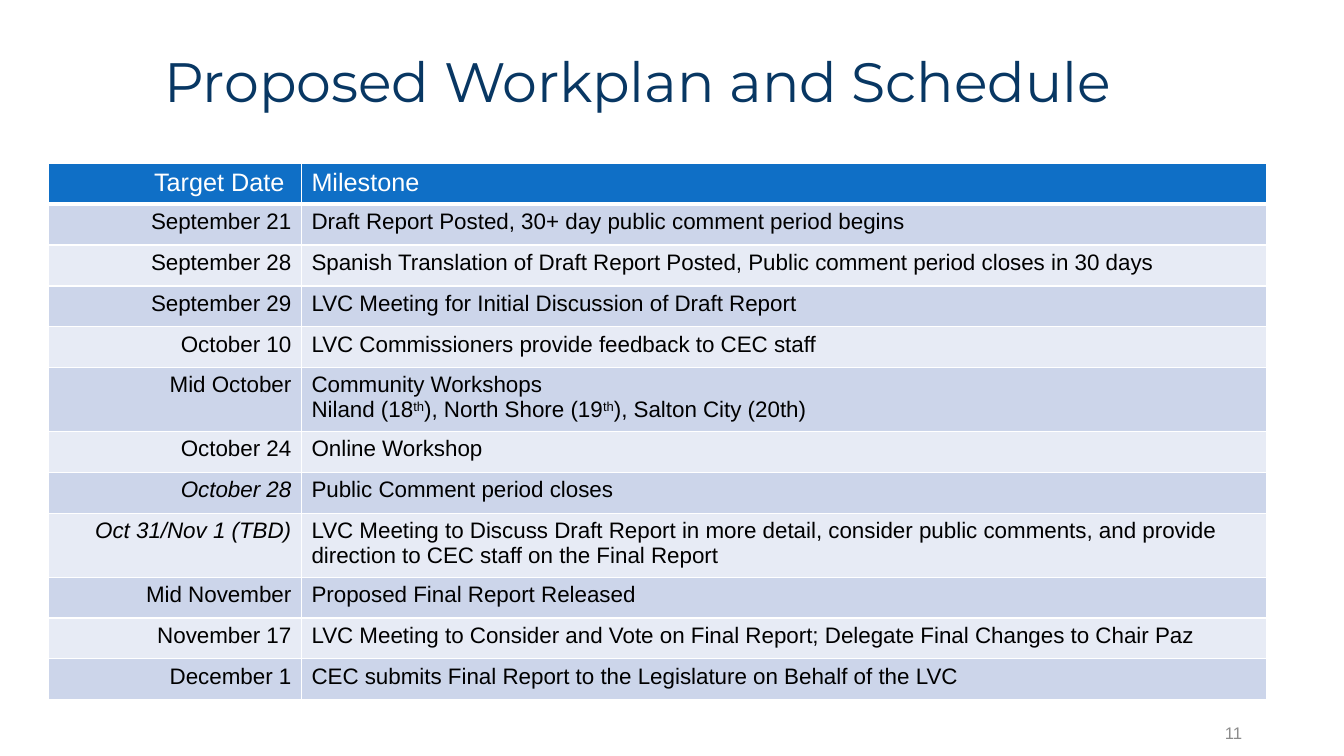
from dataclasses import dataclass

from lxml.etree import SubElement
from pptx import Presentation
from pptx.dml.color import RGBColor
from pptx.enum.text import MSO_ANCHOR as Anchor, PP_ALIGN as Align
from pptx.oxml.ns import qn
from pptx.util import Inches, Pt


@dataclass(frozen=True)
class Theme:
    heading_font: str = "Montserrat"
    body_font: str = "Arial"
    title_color: str = "083763"
    header_fill: str = "0F6FC6"
    odd_fill: str = "CCD5EA"
    even_fill: str = "E7EBF5"
    white: str = "FFFFFF"
    black: str = "000000"
    grey: str = "8C8C8C"
    title_size: float = 39.6
    header_size: float = 18
    body_size: float = 16
    number_size: float = 12
    border: float = 1
    header_border: float = 3


THEME = Theme()
HEADINGS = ("Target Date ", "Milestone")
ITALIC_DATES = {"October 28", "Oct 31/Nov 1 (TBD)"}
SCHEDULE = [
    ("September 21", "Draft Report Posted, 30+ day public comment period begins"),
    ("September 28", "Spanish Translation of Draft Report Posted, Public comment period closes in 30 days"),
    ("September 29", "LVC Meeting for Initial Discussion of Draft Report"),
    ("October 10", "LVC Commissioners provide feedback to CEC staff"),
    ("Mid October", "Community Workshops\nNiland (18^th^), North Shore (19^th^), Salton City (20th)"),
    ("October 24", "Online Workshop"),
    ("October 28", "Public Comment period closes"),
    ("Oct 31/Nov 1 (TBD)", "LVC Meeting to Discuss Draft Report in more detail, consider public comments, "
                           "and provide direction to CEC staff on the Final Report"),
    ("Mid November", "Proposed Final Report Released"),
    ("November 17", "LVC Meeting to Consider and Vote on Final Report; Delegate Final Changes to Chair Paz"),
    ("December 1", "CEC submits Final Report to the Legislature on Behalf of the LVC"),
]


def write_text(frame, text, *, size, color, font=THEME.body_font, align=Align.LEFT,
               italic=False, line_spacing=None):
    for index, line in enumerate(text.split("\n")):
        paragraph = frame.add_paragraph() if index else frame.paragraphs[0]
        paragraph.alignment = align
        paragraph.line_spacing = line_spacing
        for position, part in enumerate(line.split("^")):
            run = paragraph.add_run()
            run.text = part
            run.font.name = font
            run.font.size = Pt(size)
            run.font.bold = False
            run.font.italic = italic
            run.font.color.rgb = RGBColor.from_string(color)
            if position % 2:
                run.font._element.set("baseline", "30000")


def set_borders(cell, bottom):
    properties = cell._tc.get_or_add_tcPr()
    widths = {"lnL": THEME.border, "lnR": THEME.border, "lnT": THEME.border, "lnB": bottom}
    for index, (side, width) in enumerate(widths.items()):
        line = properties.makeelement(qn(f"a:{side}"), {"w": str(Pt(width))})
        fill = SubElement(line, qn("a:solidFill"))
        SubElement(fill, qn("a:srgbClr"), val=THEME.white)
        properties.insert(index, line)


def place_title(slide, left, top, width, height):
    title = slide.shapes.title
    title.left, title.top, title.width, title.height = left, top, width, height
    frame = title.text_frame
    frame.word_wrap = True
    frame.vertical_anchor = Anchor.MIDDLE
    write_text(frame, "Proposed Workplan and Schedule", size=THEME.title_size,
               color=THEME.title_color, font=THEME.heading_font, line_spacing=0.9)


def place_schedule(slide, left, top, width, height):
    rows = [HEADINGS, *SCHEDULE]
    table = slide.shapes.add_table(len(rows), len(HEADINGS), left, top, width, height).table
    date_width = Inches(2.51)
    table.columns[0].width = date_width
    table.columns[1].width = width - date_width
    for row_index, row in enumerate(rows):
        is_header = row_index == 0
        band = THEME.odd_fill if row_index % 2 else THEME.even_fill
        for column, text in enumerate(row):
            cell = table.cell(row_index, column)
            cell.fill.solid()
            cell.fill.fore_color.rgb = RGBColor.from_string(THEME.header_fill if is_header else band)
            set_borders(cell, THEME.header_border if is_header else THEME.border)
            write_text(cell.text_frame, text,
                       size=THEME.header_size if is_header else THEME.body_size,
                       color=THEME.white if is_header else THEME.black,
                       align=Align.LEFT if column else Align.RIGHT,
                       italic=text in ITALIC_DATES)


def place_page_number(slide, left, top, width, height):
    frame = slide.shapes.add_textbox(left, top, width, height).text_frame
    frame.word_wrap = True
    frame.vertical_anchor = Anchor.MIDDLE
    write_text(frame, "11", size=THEME.number_size, color=THEME.grey, align=Align.RIGHT)


def main():
    presentation = Presentation()
    presentation.slide_width = Inches(13.33)
    presentation.slide_height = Inches(7.5)
    slide = presentation.slides.add_slide(presentation.slide_layouts.get_by_name("Title Only"))
    place_title(slide, Inches(1.53), Inches(0.27), Inches(10.89), Inches(1.14))
    place_page_number(slide, Inches(9.42), Inches(7.07), Inches(3), Inches(0.4))
    place_schedule(slide, Inches(0.48), Inches(1.62), Inches(12.08), Inches(4.87))
    presentation.save("out.pptx")


if __name__ == "__main__":
    main()
